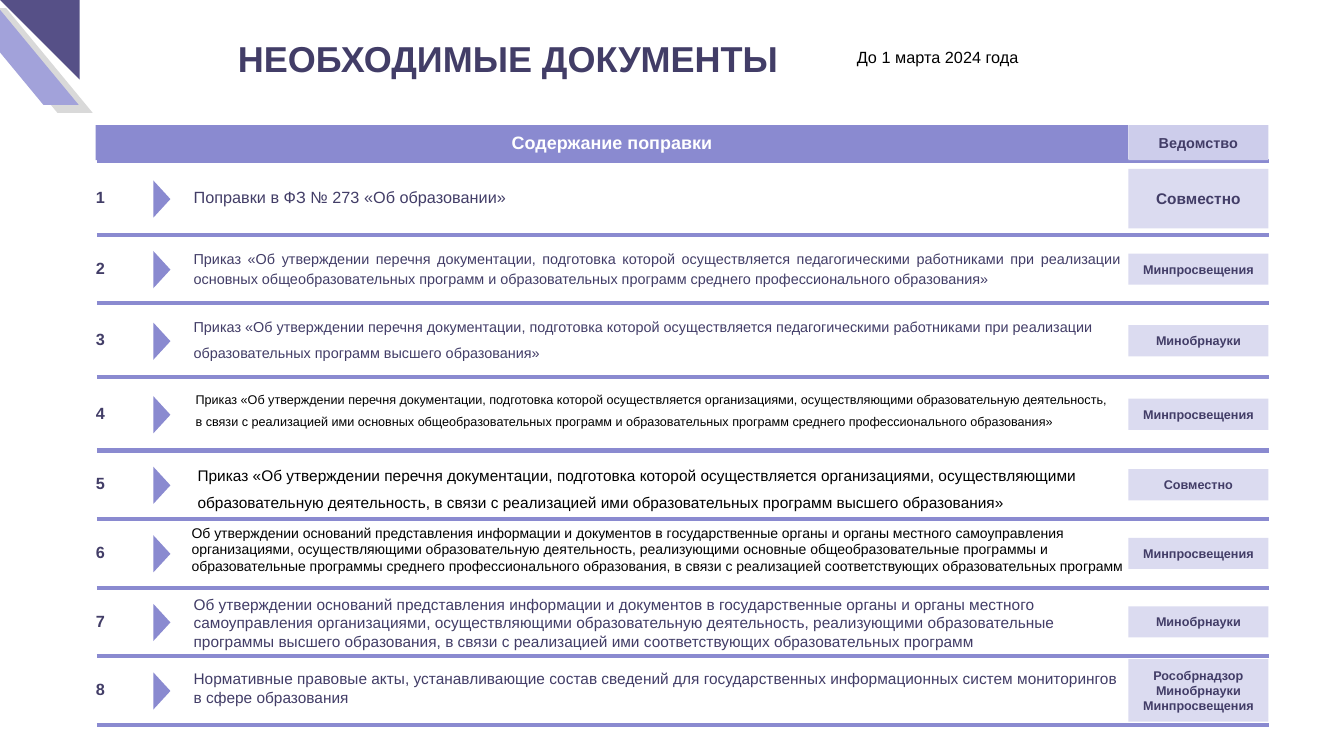
from pptx import Presentation
from pptx.dml.color import RGBColor
from pptx.enum import shapes, text
from pptx.oxml.ns import qn
from pptx.util import Inches, Pt
from lxml import etree

INK, VIOLET, WHITE, BLACK = "423D67", "8A8AD0", "FFFFFF", "000000"
LEFT, CENTER, JUSTIFY = text.PP_ALIGN.LEFT, text.PP_ALIGN.CENTER, text.PP_ALIGN.JUSTIFY
TOP, MIDDLE = text.MSO_ANCHOR.TOP, text.MSO_ANCHOR.MIDDLE


def paint(fill, color, opacity=100):
    """Make a fill solid, with its opacity in percent."""
    fill.solid()
    fill.fore_color.rgb = RGBColor.from_string(color)
    if opacity < 100:
        color_element = fill._xPr.find(".//" + qn("a:srgbClr"))
        etree.SubElement(color_element, qn("a:alpha"), val=str(opacity * 1000))


def write(shape, content, size, color=INK, bold=False, align=LEFT, anchor=TOP,
          spacing=1.0, wrap=True, margins=(0, 0)):
    """Fill a shape with text; margins are horizontal and vertical inches."""
    frame = shape.text_frame
    frame.text = content
    frame.word_wrap = wrap
    frame.auto_size = text.MSO_AUTO_SIZE.NONE
    frame.vertical_anchor = anchor
    frame.margin_left = frame.margin_right = Inches(margins[0])
    frame.margin_top = frame.margin_bottom = Inches(margins[1])
    for paragraph in frame.paragraphs:
        paragraph.alignment = align
        paragraph.line_spacing = spacing
        paragraph.font.name = "Arial"
        paragraph.font.size = Pt(size)
        paragraph.font.bold = bold
        paint(paragraph.font.fill, color)


presentation = Presentation()
presentation.slide_width = Inches(13.33)
presentation.slide_height = Inches(7.5)
slide = presentation.slides.add_slide(presentation.slide_layouts[5])

# Corner decoration
for left, top, color in [(-0.29, 0.08, "D9D9D9"), (-0.43, 0, "A2A2DA")]:
    corners = [(Inches(left + x), Inches(top + y))
               for x, y in [(0, 0), (0.35, 0), (1.21, 1.04), (0.86, 1.04)]]
    builder = slide.shapes.build_freeform(*corners[0])
    builder.add_line_segments(corners[1:])
    paint(builder.convert_to_shape().fill, color)
corner = slide.shapes.add_shape(shapes.MSO_SHAPE.RIGHT_TRIANGLE, 0, 0, Inches(0.79), Inches(0.79))
corner.rotation = 180
paint(corner.fill, "565087")

# Title and deadline
title = slide.shapes.title
title.left, title.top, title.width, title.height = map(Inches, (2.36, 0.31, 6.98, 0.53))
write(title, "НЕОБХОДИМЫЕ ДОКУМЕНТЫ", 25.7, bold=True, margins=(0, 0.05))
deadline = slide.shapes.add_textbox(Inches(8.4), Inches(0.42), Inches(1.86), Inches(0.3))
write(deadline, "До 1 марта 2024 года", 11.6, BLACK, wrap=False, margins=(0.1, 0.05))

# Row centre, line below, agency, badge height, badge text size,
# text position (left, top, width), text, text format
rows = [
    (1.97, 2.33, "Совместно", 0.59, 11, (1.92, 1.86, 8.72),
     "Поправки в ФЗ № 273 «Об образовании»", dict(size=11.6)),
    (2.67, 3.01, "Минпросвещения", 0.31, 9, (1.92, 2.46, 9.21),
     "Приказ «Об утверждении перечня документации, подготовка которой осуществляется "
     "педагогическими работниками при реализации основных общеобразовательных программ "
     "и образовательных программ среднего профессионального образования»",
     dict(size=10.3, align=JUSTIFY, spacing=1.15)),
    (3.38, 3.74, "Минобрнауки", 0.31, 9, (1.92, 3.07, 9.08),
     "Приказ «Об утверждении перечня документации, подготовка которой осуществляется "
     "педагогическими работниками при реализации образовательных программ высшего образования»",
     dict(size=10.3, spacing=1.5)),
    (4.11, 4.47, "Минпросвещения", 0.31, 9, (1.94, 3.81, 9.09),
     "Приказ «Об утверждении перечня документации, подготовка которой осуществляется "
     "организациями, осуществляющими образовательную деятельность, в связи с реализацией ими "
     "основных общеобразовательных программ и образовательных программ среднего "
     "профессионального образования»",
     dict(size=9, color=BLACK, spacing=1.5)),
    (4.81, 5.15, "Совместно", 0.31, 9, (1.96, 4.53, 8.96),
     "Приказ «Об утверждении перечня документации, подготовка которой осуществляется "
     "организациями, осуществляющими образовательную деятельность, в связи с реализацией ими "
     "образовательных программ высшего образования»",
     dict(size=11, color=BLACK, spacing=1.5)),
    (5.49, 5.83, "Минпросвещения", 0.31, 9, (1.9, 5.2, 9.32),
     "Об утверждении оснований представления информации и документов в государственные органы "
     "и органы местного самоуправления организациями, осуществляющими образовательную "
     "деятельность, реализующими основные общеобразовательные программы и образовательные "
     "программы среднего профессионального образования, в связи с реализацией соответствующих "
     "образовательных программ",
     dict(size=10, color=BLACK)),
    (6.17, 6.51, "Минобрнауки", 0.31, 9, (1.92, 5.9, 9.21),
     "Об утверждении оснований представления информации и документов в государственные органы "
     "и органы местного самоуправления организациями, осуществляющими образовательную "
     "деятельность, реализующими образовательные программы высшего образования, в связи с "
     "реализацией ими соответствующих образовательных программ",
     dict(size=11)),
    (6.85, 7.19, "Рособрнадзор\nМинобрнауки\nМинпросвещения", 0.62, 9, (1.92, 6.64, 9.28),
     "Нормативные правовые акты, устанавливающие состав сведений для государственных "
     "информационных систем мониторингов в сфере образования",
     dict(size=11)),
]

for y in [1.6] + [row[1] for row in rows]:
    rule = slide.shapes.add_connector(
        shapes.MSO_CONNECTOR.STRAIGHT, Inches(0.96), Inches(y), Inches(12.59), Inches(y))
    paint(rule.line.fill, VIOLET)
    rule.line.width = Pt(3)
    etree.SubElement(rule._element.spPr, qn("a:effectLst"))

# Header
for left, width, color, label, size, ink in [
        (0.95, 10.24, VIOLET, "Содержание поправки", 12.8, WHITE),
        (11.19, 1.39, "CDCDEB", "Ведомство", 10.3, INK)]:
    header = slide.shapes.add_shape(
        shapes.MSO_SHAPE.RECTANGLE, Inches(left), Inches(1.24), Inches(width), Inches(0.35))
    paint(header.fill, color)
    write(header, label, size, ink, bold=True, align=CENTER, anchor=MIDDLE, margins=(0.1, 0.03))

# Rows
for number, row in enumerate(rows, 1):
    center, _, agency, badge_height, badge_size, (left, top, width), content, style = row
    number_box = slide.shapes.add_textbox(
        Inches(0.95), Inches(center - 0.11), Inches(0.41), Inches(0.21))
    write(number_box, str(number), 11.6, bold=True)

    marker = slide.shapes.add_shape(
        shapes.MSO_SHAPE.ISOSCELES_TRIANGLE,
        Inches(1.42), Inches(center - 0.08), Inches(0.37), Inches(0.17))
    marker.rotation = 90
    paint(marker.fill, VIOLET)

    badge = slide.shapes.add_shape(
        shapes.MSO_SHAPE.RECTANGLE, Inches(11.19), Inches(center - badge_height / 2),
        Inches(1.39), Inches(badge_height))
    paint(badge.fill, VIOLET, opacity=30)
    write(badge, agency, badge_size, bold=True, align=CENTER, anchor=MIDDLE, margins=(0.03, 0.03))

    description = slide.shapes.add_textbox(
        Inches(left), Inches(top), Inches(width), Inches(0.5))
    write(description, content, **style)

for shape in slide.shapes:
    if shape.shape_type in (shapes.MSO_SHAPE_TYPE.AUTO_SHAPE, shapes.MSO_SHAPE_TYPE.FREEFORM):
        shape.line.fill.background()
        shape.shadow.inherit = False

presentation.save("out.pptx")
